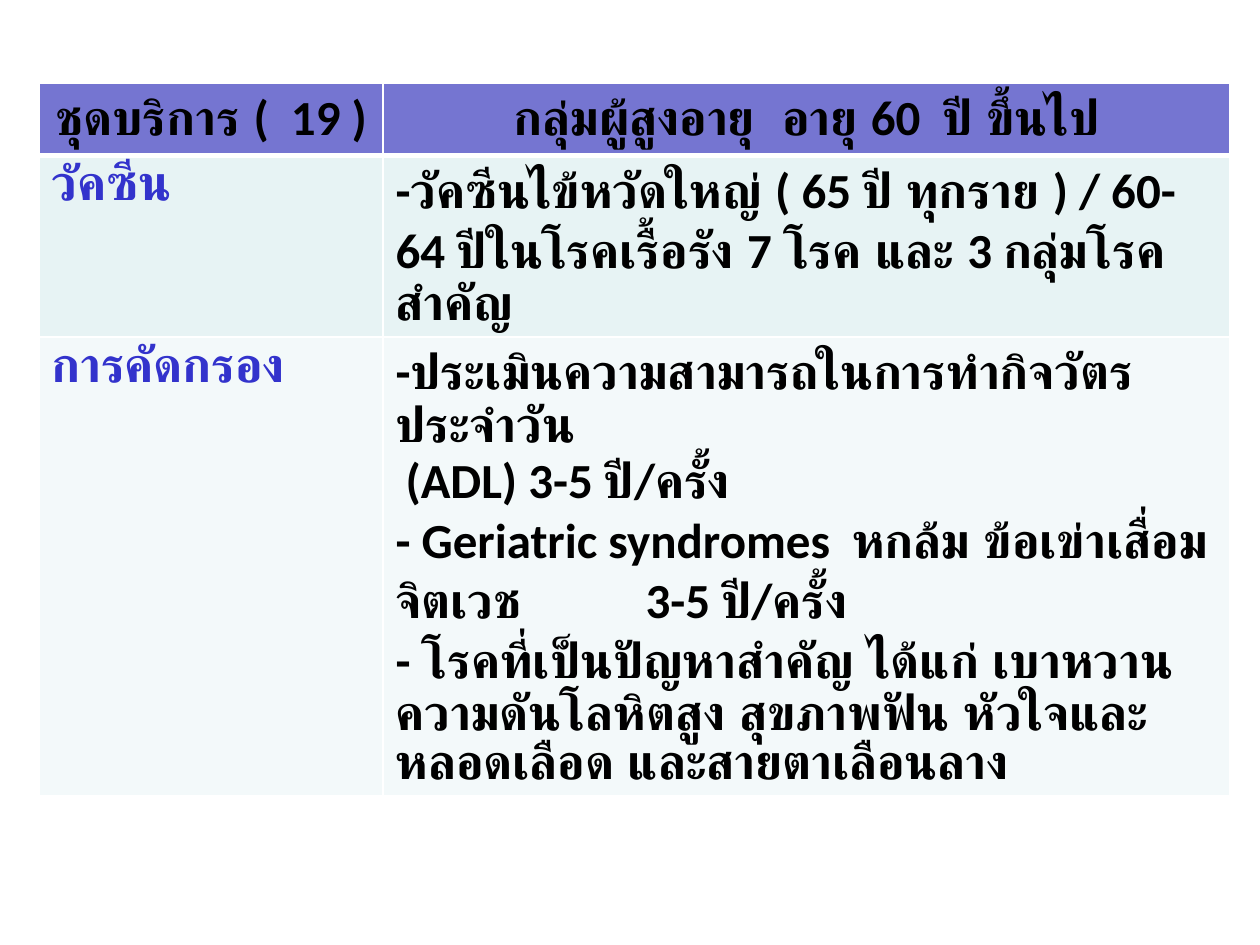
from lxml import etree
from pptx import Presentation
from pptx.dml.color import RGBColor
from pptx.enum.text import PP_ALIGN
from pptx.oxml.ns import qn
from pptx.util import Emu, Pt

PX = 914400 // 126
CENTER, LEFT = PP_ALIGN.CENTER, PP_ALIGN.LEFT

BLACK = RGBColor(0x00, 0x00, 0x00)
WHITE = RGBColor(0xFF, 0xFF, 0xFF)
BLUE = RGBColor(0x33, 0x33, 0xCC)
HEADER_FILL = RGBColor(0x75, 0x75, 0xD1)
BAND_FILLS = [RGBColor(0xE7, 0xF3, 0xF4), RGBColor(0xF3, 0xF9, 0xFA)]

FONT, SIZE = "Calibri", 28
COLUMN_WIDTHS = [344, 847]
MIN_ROW_HEIGHT = 48
INDENT, TAB_STOP = 10, 250

HEADINGS = ["ชุดบริการ (  19 )", "กลุ่มผู้สูงอายุ  อายุ 60  ปี ขึ้นไป"]
# Each service: name, then (text, left indent) per paragraph
SERVICES = [
    ("วัคซีน", [
        ("-วัคซีนไข้หวัดใหญ่ ( 65 ปี ทุกราย ) / 60-64 ปีในโรคเรื้อรัง 7 โรค และ 3 กลุ่มโรคสำคัญ", 0),
    ]),
    ("การคัดกรอง", [
        ("-ประเมินความสามารถในการทำกิจวัตรประจำวัน", 0),
        ("(ADL) 3-5 ปี/ครั้ง", INDENT),
        ("- Geriatric syndromes  หกล้ม ข้อเข่าเสื่อม จิตเวช\t3-5 ปี/ครั้ง", 0),
        ("- โรคที่เป็นปัญหาสำคัญ ได้แก่ เบาหวาน ความดันโลหิตสูง สุขภาพฟัน "
         "หัวใจและหลอดเลือด และสายตาเลือนลาง", 0),
    ]),
]


def px(value):
    return Emu(value * PX)


def set_borders(cell, top=1, bottom=1):
    properties = cell._tc.get_or_add_tcPr()
    for side, width in (("L", 1), ("R", 1), ("T", top), ("B", bottom)):
        line = etree.SubElement(properties, qn(f"a:ln{side}"), w=str(Pt(width)))
        fill = etree.SubElement(line, qn("a:solidFill"))
        etree.SubElement(fill, qn("a:srgbClr"), val=str(WHITE))


def write_paragraph(para, text, color, align, indent):
    para.alignment = align
    properties = para._p.get_or_add_pPr()
    if indent:
        properties.set("marL", str(px(indent)))
        properties.set("indent", "0")
    if "\t" in text:
        tabs = etree.SubElement(properties, qn("a:tabLst"))
        etree.SubElement(tabs, qn("a:tab"), pos=str(px(TAB_STOP)), algn="l")
    span = para.add_run()
    span.text = text
    span.font.name = FONT
    span.font.size = Pt(SIZE)
    span.font.bold = True
    span.font.color.rgb = color


def fill_cell(cell, lines, color, fill, align=LEFT, top=1, bottom=1):
    set_borders(cell, top, bottom)
    cell.fill.solid()
    cell.fill.fore_color.rgb = fill
    frame = cell.text_frame
    for index, (text, indent) in enumerate(lines):
        para = frame.add_paragraph() if index else frame.paragraphs[0]
        write_paragraph(para, text, color, align, indent)


def add_service_table(page, left, top, width, height):
    box = page.shapes.add_table(len(SERVICES) + 1, len(HEADINGS),
                                px(left), px(top), px(width), px(height))
    table = box.table
    for column, column_width in zip(table.columns, COLUMN_WIDTHS):
        column.width = px(column_width)
    # Rows grow to fit their text
    for row in table.rows:
        row.height = px(MIN_ROW_HEIGHT)

    # Header row with a thick rule below
    for index, heading in enumerate(HEADINGS):
        fill_cell(table.cell(0, index), [(heading, 0)], BLACK, HEADER_FILL,
                  CENTER, bottom=3)

    # One row per service
    for index, (name, lines) in enumerate(SERVICES):
        fill = BAND_FILLS[index % len(BAND_FILLS)]
        rule = 1 if index else 3
        fill_cell(table.cell(index + 1, 0), [(name, 0)], BLUE, fill, top=rule)
        fill_cell(table.cell(index + 1, 1), lines, BLACK, fill, top=rule)


def main():
    deck = Presentation()
    deck.slide_width, deck.slide_height = px(1260), px(945)
    page = deck.slides.add_slide(deck.slide_layouts[6])
    page.background.fill.solid()
    page.background.fill.fore_color.rgb = WHITE
    add_service_table(page, 39, 83, sum(COLUMN_WIDTHS), 567)
    deck.save("out.pptx")


if __name__ == "__main__":
    main()
